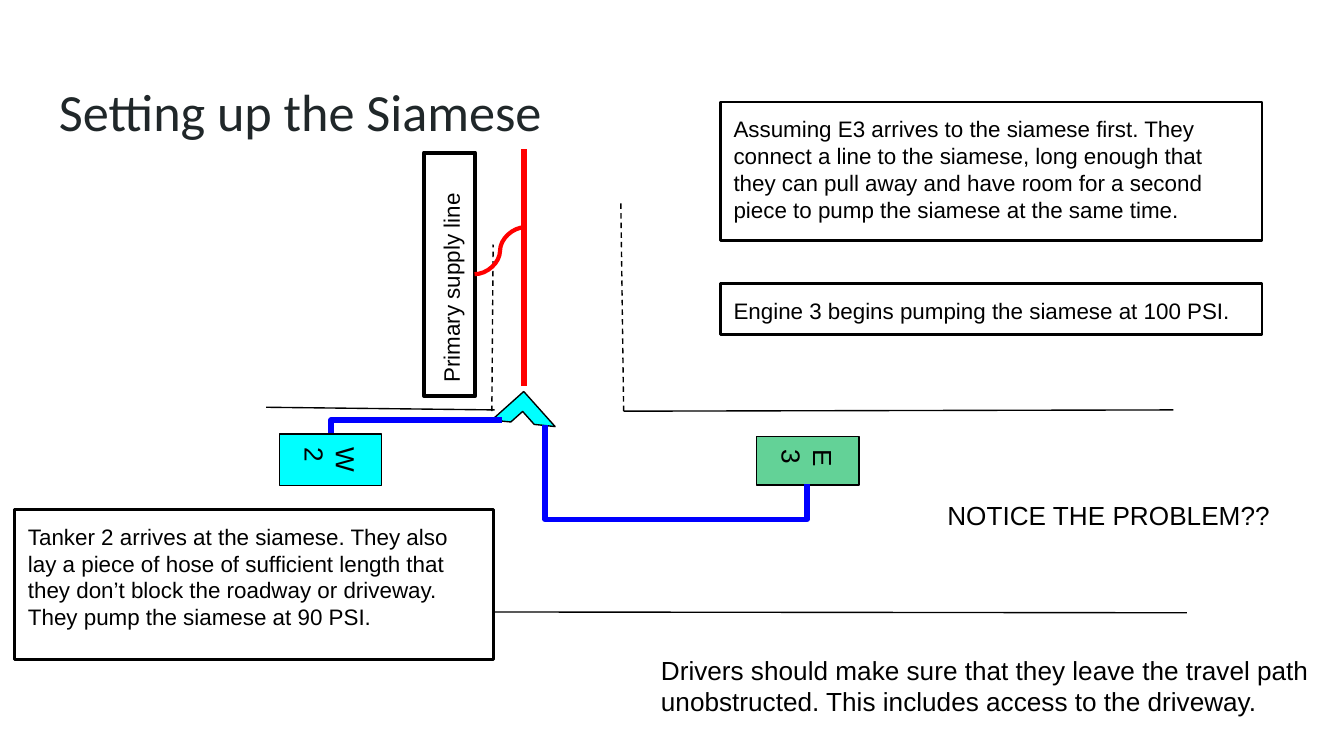
"""Builds a slide showing how two engines feed a siamese connection."""
from lxml.etree import SubElement
from pptx import Presentation
from pptx.dml.color import RGBColor
from pptx.enum.dml import MSO_LINE
from pptx.enum.shapes import MSO_CONNECTOR, MSO_SHAPE
from pptx.enum.text import MSO_ANCHOR, PP_ALIGN
from pptx.oxml.ns import qn
from pptx.util import Pt

BLACK = RGBColor(0x00, 0x00, 0x00)
WHITE = RGBColor(0xFF, 0xFF, 0xFF)
INK = RGBColor(0x20, 0x27, 0x29)
RED = RGBColor(0xFF, 0x00, 0x00)
BLUE = RGBColor(0x00, 0x00, 0xFF)
CYAN = RGBColor(0x00, 0xFF, 0xFF)
GREEN = RGBColor(0x63, 0xD2, 0x97)


class Diagram:
    inset = 7.2
    thin = 0.75
    hose = 3

    def __init__(self, s):
        self.s = s

    def set_text(self, sp, text, size, font="Arial", color=BLACK, anchor=MSO_ANCHOR.TOP):
        tf = sp.text_frame
        tf.word_wrap = True
        tf.vertical_anchor = anchor
        tf.margin_left = tf.margin_right = Pt(self.inset)
        tf.margin_top = tf.margin_bottom = Pt(self.inset)
        p = tf.paragraphs[0]
        p.text = text
        p.alignment = PP_ALIGN.LEFT
        p.font.size = Pt(size)
        p.font.name = font
        p.font.color.rgb = color

    def label(self, box, text, size, **style):
        sp = self.s.shapes.add_textbox(*map(Pt, box))
        self.set_text(sp, text, size, **style)

    def shape(self, box, kind=MSO_SHAPE.RECTANGLE, fill=None, width=thin, rotation=0):
        sp = self.s.shapes.add_shape(kind, *map(Pt, box))
        sp.shadow.inherit = False
        sp.rotation = rotation
        if fill is None:
            sp.fill.background()
        else:
            sp.fill.solid()
            sp.fill.fore_color.rgb = fill
        if width:
            sp.line.color.rgb = BLACK
            sp.line.width = Pt(width)
        else:
            sp.line.fill.background()
        return sp

    def note(self, box, text, size=12, fill=None, width=1.5, rotation=0):
        sp = self.shape(box, fill=fill, width=width, rotation=rotation)
        self.set_text(sp, text, size)

    def truck(self, box, name, fill):
        sp = self.shape(box, fill=fill, rotation=90)
        self.set_text(sp, name, 14, anchor=MSO_ANCHOR.MIDDLE)

    def siamese(self, box, rotation):
        sp = self.shape(box, MSO_SHAPE.HALF_FRAME, CYAN, rotation=rotation)
        sp.adjustments[0] = sp.adjustments[1] = 0.33

    def line(self, ends, color=BLACK, width=thin, dash=None, kind=MSO_CONNECTOR.STRAIGHT):
        c = self.s.shapes.add_connector(kind, *map(Pt, ends))
        c.line.color.rgb = color
        c.line.width = Pt(width)
        if dash:
            c.line.dash_style = dash
        SubElement(c._element.spPr, qn("a:effectLst"))
        return c

    def bend(self, ends, rotation, preset, color=BLUE, width=hose, adjust=None):
        c = self.line(ends, color, width, kind=MSO_CONNECTOR.ELBOW)
        spPr = c._element.spPr
        spPr.find(qn("a:xfrm")).set("rot", str(rotation * 60000))
        geom = spPr.find(qn("a:prstGeom"))
        geom.set("prst", preset)
        if adjust is not None:
            guides = geom.find(qn("a:avLst"))
            SubElement(guides, qn("a:gd"), name="adj1", fmla=f"val {round(adjust * 100000)}")


def main():
    prs = Presentation()
    prs.slide_width, prs.slide_height = Pt(720), Pt(405)
    d = Diagram(prs.slides.add_slide(prs.slide_layouts[6]))

    d.label((24.5, 35.3, 671, 45.4), "Setting up the Siamese", 28, font="Calibri", color=INK)

    for road_edge in ((142.6, 218.2, 265, 219.6), (31, 327.6, 635.8, 328.3),
                      (334.1, 220.3, 628.6, 219.6)):
        d.line(road_edge)
    for driveway_edge in ((263.5, 220.3, 264.2, 131), (334.1, 220.3, 332.6, 108)):
        d.line(driveway_edge, dash=MSO_LINE.DASH)

    d.siamese((267.8, 215.3, 25.2, 23), 48.2)
    d.truck((163.4, 218.9, 27.4, 54.7), "W2", CYAN)
    d.truck((419.8, 219.6, 25.9, 54.7), "E3", GREEN)
    d.bend((378, 173.5, 346.3, 313.9), 90, "bentConnector3", adjust=-0.59)
    d.bend((219.6, 182.9, 226.8, 274.3), 270, "bentConnector2")

    d.note((347, 343.4, 365.8, 45.4),
           "Drivers should make sure that they leave the travel path unobstructed. "
           "This includes access to the driveway.", size=14, fill=WHITE, width=0)
    d.line((280.8, 206.6, 280.8, 79.9), RED, d.hose)
    d.note((175.7, 133.2, 130.3, 27.4), "Primary supply line", width=2.25, rotation=270)
    d.bend((281.5, 121.7, 254.2, 146.9), 180, "curvedConnector3", RED, 2.25, 0.5)

    d.note((7.9, 272.9, 256.3, 80.6),
           "Tanker 2 arrives at the siamese. They also lay a piece of hose of sufficient "
           "length that they don’t block the roadway or driveway. "
           "They pump the siamese at 90 PSI.", fill=WHITE)
    d.note((385.9, 151.9, 290.2, 27.4), "Engine 3 begins pumping the siamese at 100 PSI.")
    d.note((385.9, 54.7, 290.2, 74.2),
           "Assuming E3 arrives to the siamese first. They connect a line to the siamese, "
           "long enough that they can pull away and have room for a second piece to pump "
           "the siamese at the same time.")
    d.label((500.4, 260.6, 203, 33.8), "NOTICE THE PROBLEM??", 14)

    prs.save("out.pptx")


if __name__ == "__main__":
    main()
